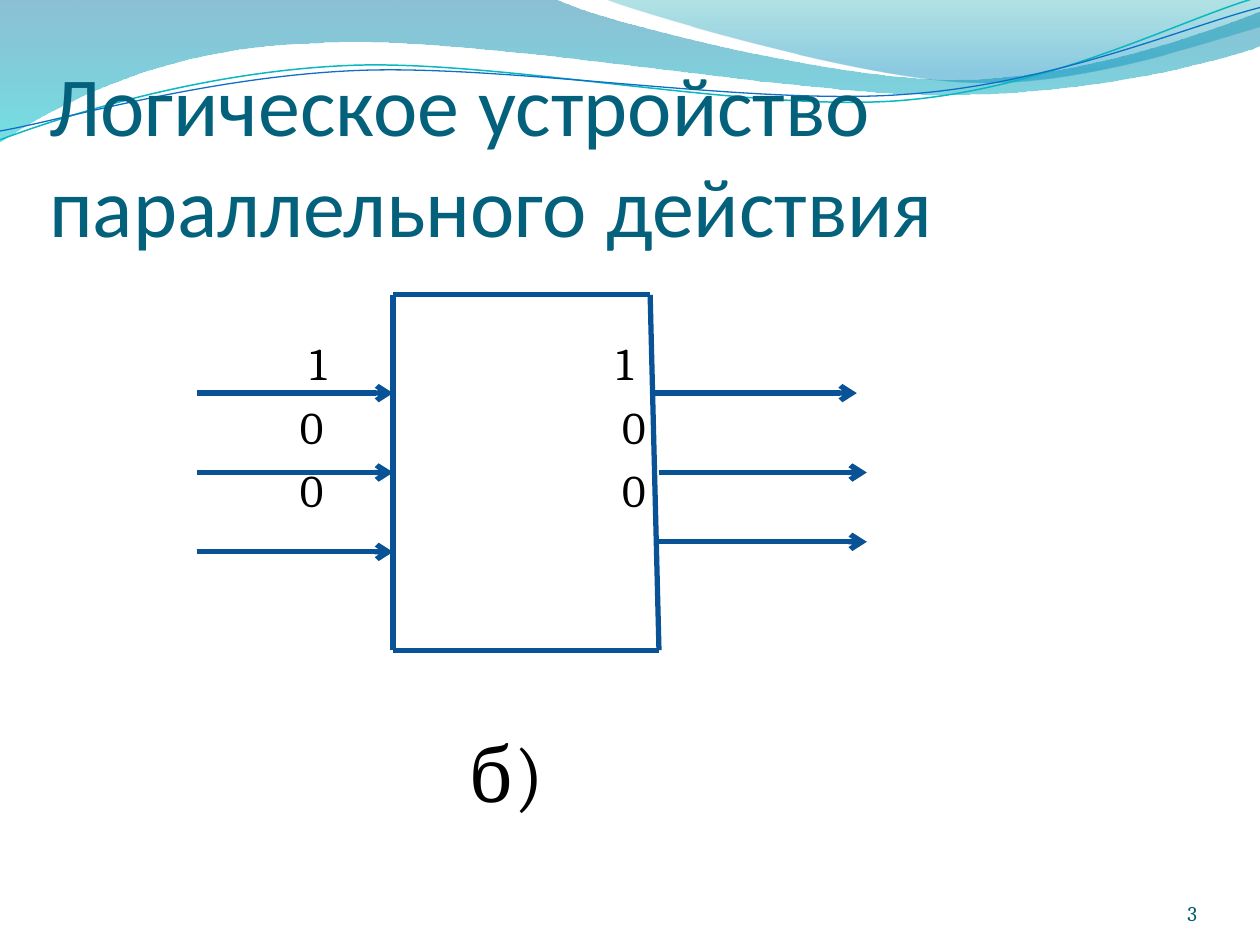
from lxml import etree
from pptx import Presentation
from pptx.dml.color import RGBColor
from pptx.enum.shapes import MSO_CONNECTOR
from pptx.enum.text import MSO_ANCHOR, MSO_AUTO_SIZE, PP_ALIGN
from pptx.oxml.ns import qn
from pptx.util import Inches, Pt

STRAIGHT = MSO_CONNECTOR.STRAIGHT
BOTTOM, TOP = MSO_ANCHOR.BOTTOM, MSO_ANCHOR.TOP
LEFT, RIGHT = PP_ALIGN.LEFT, PP_ALIGN.RIGHT
NO_FIT = MSO_AUTO_SIZE.NONE

BLACK = RGBColor(0x00, 0x00, 0x00)
TITLE = RGBColor(0x04, 0x61, 0x7B)
NUMBER = RGBColor(0x04, 0x5D, 0x75)
WIRE = RGBColor(0x09, 0x52, 0x95)
DEEP_BLUE = RGBColor(0x00, 0x74, 0xA1)
CYAN = RGBColor(0x00, 0xC6, 0xCF)
TEAL = RGBColor(0x00, 0xA1, 0xA9)
BLUE = RGBColor(0x00, 0x8B, 0xBF)
THIN_TEAL = RGBColor(0x0A, 0xB8, 0xBF)
THIN_BLUE = RGBColor(0x0F, 0x6F, 0xC6)


class Deck:
    def __init__(self):
        self.prs = Presentation()
        self.prs.slide_width, self.prs.slide_height = Inches(10), Inches(7.5)
        self.s = self.prs.slides.add_slide(self.prs.slide_layouts[1])

    def outline(self, start, segments, close):
        """Freeform path; a segment is an end point (2 numbers) or a Bezier (6)."""
        points = [(Inches(seg[i]), Inches(seg[i + 1]))
                  for seg in segments for i in range(0, len(seg), 2)]
        fb = self.s.shapes.build_freeform(*map(Inches, start))
        fb.add_line_segments(points, close=close)
        sp = fb.convert_to_shape()
        sp.shadow.inherit = False
        path_el = next(sp._element.iter(qn("a:path")))
        lines = iter(path_el.findall(qn("a:lnTo")))
        for seg in segments:
            first = next(lines)
            if len(seg) == 6:
                first.tag = qn("a:cubicBezTo")
                for extra in (next(lines), next(lines)):
                    first.append(extra[0])
                    path_el.remove(extra)
        return sp

    def wave(self, start, segments, stops):
        """Closed shape with a top-down gradient; a stop is (position, colour, opacity %)."""
        sp = self.outline(start, segments, True)
        sp.line.fill.background()
        sp.fill.gradient()
        sp.fill.gradient_angle = 270
        for stop, (position, color, opacity) in zip(sp.fill.gradient_stops, stops):
            stop.position = position
            stop.color.rgb = color
            clr = stop._gs.find(qn("a:srgbClr"))
            etree.SubElement(clr, qn("a:alpha"), val=str(opacity * 1000))

    def curve(self, start, segments, color, width):
        sp = self.outline(start, segments, False)
        sp.fill.background()
        sp.line.color.rgb = color
        sp.line.width = Pt(width)

    def wire(self, x1, y1, x2, y2, arrow=False):
        c = self.s.shapes.add_connector(
            STRAIGHT, Inches(x1), Inches(y1), Inches(x2), Inches(y2))
        c.line.color.rgb = WIRE
        c.line.width = Pt(3)
        if arrow:
            etree.SubElement(c.line._get_or_add_ln(), qn("a:tailEnd"), type="arrow")
        etree.SubElement(c._element.spPr, qn("a:effectLst"))

    def frame(self, sp, box, anchor, insets):
        sp.left, sp.top, sp.width, sp.height = map(Inches, box)
        tf = sp.text_frame
        tf.word_wrap, tf.auto_size, tf.vertical_anchor = True, NO_FIT, anchor
        tf.margin_left, tf.margin_top, tf.margin_right, tf.margin_bottom = map(Inches, insets)
        return tf

    def placeholder(self, idx, box, anchor, insets):
        """Text frame of a placeholder, brought in front of what is drawn so far."""
        sp = self.s.placeholders[idx]
        tf = self.frame(sp, box, anchor, insets)
        self.s.shapes._spTree.append(sp._element)
        return tf

    def text_box(self, box, anchor, insets):
        sp = self.s.shapes.add_textbox(*map(Inches, box))
        return self.frame(sp, box, anchor, insets)

    def run(self, p, text, size, font, color, align=LEFT):
        p.alignment = align
        r = p.add_run()
        r.text = text
        r.font.size, r.font.name, r.font.color.rgb = Pt(size), font, color
        return r

    def indented(self, p, words, size, left, before, gap=0):
        """Unbulleted line; gap is the tracking, in points, of the space between words."""
        p.space_before = Pt(before)
        pPr = p._p.get_or_add_pPr()
        pPr.set("marL", str(int(Inches(left))))
        pPr.set("indent", "0")
        etree.SubElement(pPr, qn("a:buNone"))
        for i, word in enumerate(words):
            if i:
                space = self.run(p, " ", size, "Cambria", BLACK)
                space.font._element.set("spc", str(gap * 100))
            self.run(p, word, size, "Cambria", BLACK)


def main():
    d = Deck()

    d.wave((0, 0), [
        (4.4, -0.01), (4.76, 0.17, 6.64, 0.63, 7.58, 0.63),
        (8.53, 0.63, 9.58, 0.26, 10, 0.09), (10.01, 0.36),
        (9.83, 0.44, 8.7, 0.76, 7.46, 0.75), (6.22, 0.75, 3.82, 0.28, 2.57, 0.34),
        (1.29, 0.36, 0.46, 0.83, -0.01, 1.13),
    ], [(0, DEEP_BLUE, 45), (1, CYAN, 55)])
    d.wave((4.79, -0.01), [
        (5.09, 0.11, 6.82, 0.62, 7.69, 0.65), (8.56, 0.69, 9.61, 0.32, 10, 0.21), (10, 0),
    ], [(0, TEAL, 30), (0.8, BLUE, 45)])
    d.curve((0, 1.11), [
        (0.48, 0.93, 1.58, 0.57, 2.77, 0.52), (3.95, 0.47, 5.93, 0.89, 7.13, 0.8),
        (8.33, 0.71, 9.38, 0.15, 9.98, -0.02),
    ], THIN_TEAL, 0.85)
    d.curve((0, 1.04), [
        (0.47, 0.96, 1.64, 0.61, 2.83, 0.56), (4.03, 0.51, 5.97, 0.84, 7.17, 0.75),
        (8.36, 0.67, 9.41, 0.21, 10, 0.06),
    ], THIN_BLUE, 0.75)

    tf = d.placeholder(0, (0.39, 0.47, 9.11, 1.55), BOTTOM, (0, 0.05, 0, 0))
    d.run(tf.paragraphs[0], "Логическое устройство параллельного действия",
          48, "Calibri", TITLE)

    tf = d.placeholder(1, (0.78, 2.11, 6.33, 4.81), TOP, (0.1, 0.55, 0.1, 0.05))
    lines = [
        ("11", 26, 1.58, 0, 160),
        ("00", 26, 1.5, 5.2, 165),
        ("00", 26, 1.5, 5.2, 165),
        (["б)"], 44, 2.85, 119),
    ]
    for i, line in enumerate(lines):
        d.indented(tf.add_paragraph() if i else tf.paragraphs[0], *line)

    tf = d.text_box((8.67, 6.95, 0.83, 0.4), BOTTOM, (0, 0, 0, 0))
    d.run(tf.paragraphs[0], "3", 12, "Cambria", NUMBER, RIGHT)

    corners = [(3.12, 2.34), (5.16, 2.34), (5.23, 5.16), (3.12, 5.16)]
    for start, end in zip(corners, corners[1:] + corners[:1]):
        d.wire(*start, *end)
    for y in (3.12, 3.75, 4.38):
        d.wire(1.56, y, 3.12, y, arrow=True)
    for x1, x2, y in ((5.16, 6.8, 3.12), (5.23, 6.88, 3.75), (5.23, 6.88, 4.3)):
        d.wire(x1, y, x2, y, arrow=True)

    d.prs.save("out.pptx")


if __name__ == "__main__":
    main()
